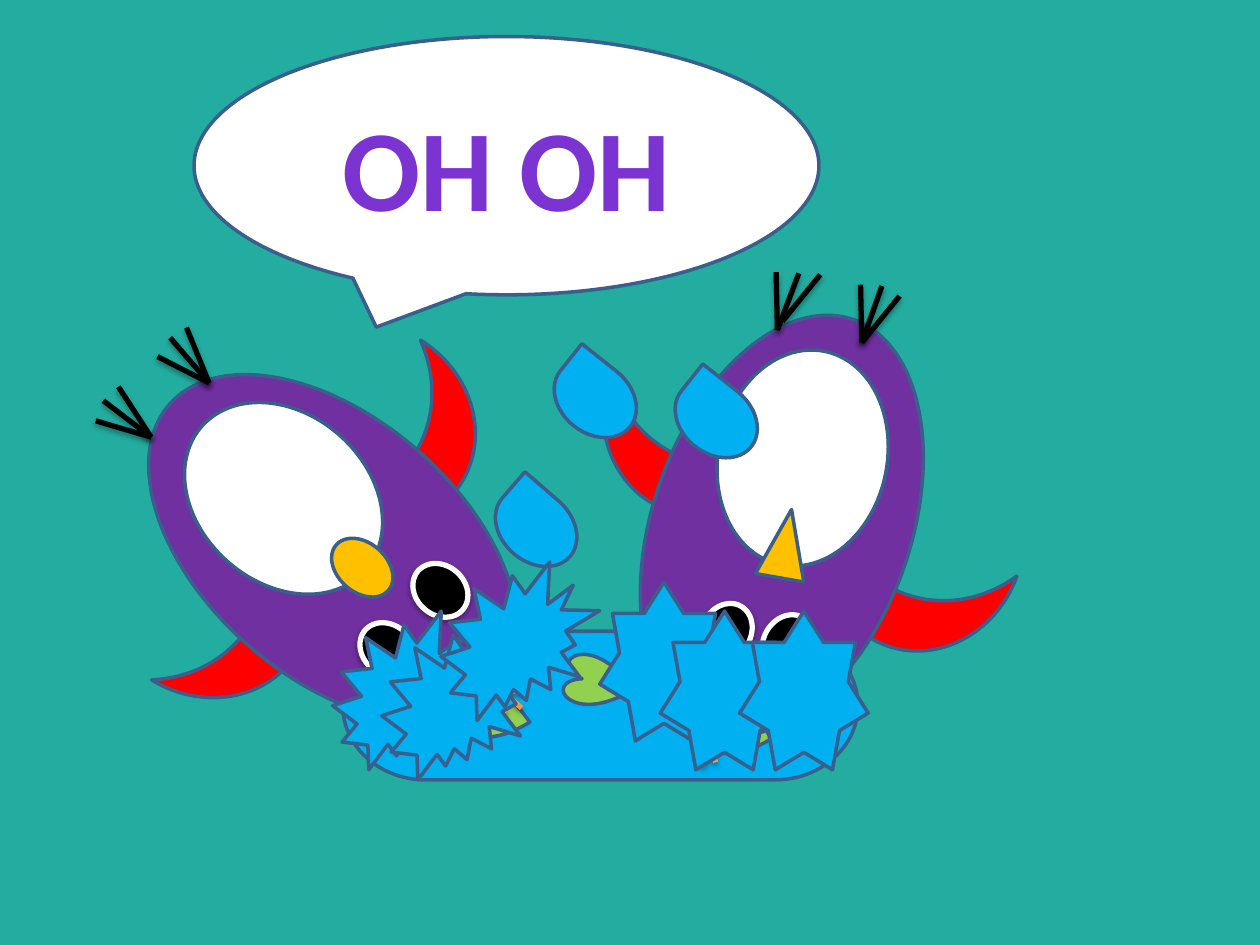
from dataclasses import dataclass
from pptx import Presentation, oxml, util as u
from pptx.dml.color import RGBColor
from pptx.enum import shapes, text
from pptx.oxml import ns

TEAL = RGBColor(0x23, 0xAD, 0xA0)
BLUE = RGBColor(0x00, 0xB0, 0xF0)
EDGE = RGBColor(0x3A, 0x5F, 0x8C)
GREEN = RGBColor(0x92, 0xD0, 0x50)
RED = RGBColor(0xFF, 0x00, 0x00)
PURPLE = RGBColor(0x70, 0x30, 0xA0)
GOLD = RGBColor(0xFF, 0xC0, 0x00)
ORANGE = RGBColor(0xF7, 0x96, 0x46)
BLACK = RGBColor(0x00, 0x00, 0x00)
WHITE = RGBColor(0xFF, 0xFF, 0xFF)
Kind = shapes.MSO_SHAPE
OVAL = Kind.FLOWCHART_CONNECTOR


@dataclass
class Form:
    kind: Kind
    size: tuple[float, float]
    fill: RGBColor
    edge: RGBColor = EDGE
    width: float = 2
    glow: bool = False


@dataclass
class Fan:
    root: tuple[float, float]
    tips: list[tuple[float, float]]
    color: RGBColor = BLACK


BOWL = Form(Kind.FLOWCHART_TERMINATOR, (4.09, 1.18), BLUE)
LEAF = Form(Kind.HEART, (0.39, 0.55), GREEN)
WING = Form(Kind.MOON, (0.87, 1.57), RED)
BODY = Form(OVAL, (2.05, 3.46), PURPLE)
EYE = Form(OVAL, (0.39, 0.47), BLACK, WHITE, 3, True)
BELLY = Form(OVAL, (1.34, 1.73), WHITE)
BEAK = Form(Kind.ISOSCELES_TRIANGLE, (0.39, 0.55), GOLD)
NOSE = Form(Kind.OVAL, (0.39, 0.55), GOLD)
DROP = Form(Kind.TEAR, (0.55, 0.71), BLUE)
STAR = Form(Kind.STAR_7_POINT, (1.02, 1.26), BLUE)
SPLASH = Form(Kind.EXPLOSION2, (1.26, 1.26), BLUE)
BUBBLE = Form(Kind.OVAL_CALLOUT, (4.96, 2.05), WHITE)


def shade(item, alpha: int, dist: float) -> None:
    item._element.spPr.append(oxml.parse_xml(
        f'<a:effectLst {ns.nsdecls("a")}><a:outerShdw blurRad="{u.Pt(3.1)}" '
        f'dist="{u.Pt(dist)}" dir="5400000" rotWithShape="0">'
        f'<a:srgbClr val="{BLACK}"><a:alpha val="{alpha}000"/></a:srgbClr>'
        '</a:outerShdw></a:effectLst>'))


def put(home, form: Form, spots: list[tuple[float, float]], turn: float = 0):
    for x, y in spots:
        item = home.add_shape(form.kind, *map(u.Inches, (x, y, *form.size)))
        item.rotation = turn
        item.fill.solid()
        item.fill.fore_color.rgb = form.fill
        item.line.color.rgb = form.edge
        item.line.width = u.Pt(form.width)
        if form.glow:
            shade(item, 38, 1.6)
        else:
            item.shadow.inherit = False
    return item


def spread(home, fan: Fan) -> None:
    for tip in fan.tips:
        line = home.add_connector(
            shapes.MSO_CONNECTOR.STRAIGHT, *map(u.Inches, (*fan.root, *tip)))
        line.line.color.rgb = fan.color
        line.line.width = u.Pt(3)
        shade(line, 35, 1.8)


def bowl(home) -> None:
    put(home, BOWL, [(2.72, 5.01)])
    put(home, LEAF, [(3.74, 5.4), (4.56, 5.14), (5.66, 5.53)], 281.8)


def right(home) -> None:
    put(home, WING, [(6.75, 3.93), (5, 2.85)], 289.8)
    put(home, BODY, [(5.18, 2.44)], 199.2)
    put(home, EYE, [(6.06, 4.87), (5.57, 4.78)], 209.5)
    for fan in (
        Fan((6.84, 2.72), [(6.83, 2.26), (7, 2.27), (7.14, 2.35)]),
        Fan((6.17, 2.62), [(6.16, 2.16), (6.34, 2.17)]),
        Fan((6.21, 2.55), [(6.51, 2.18)]),
        Fan((5.69, 5.87), [(5.55, 5.97), (5.57, 6.08)], ORANGE),
        Fan((5.68, 6.05), [(5.62, 5.83)], ORANGE),
    ):
        spread(home, fan)
    put(home, BELLY, [(5.7, 2.77)], 192)
    put(home, BEAK, [(6.04, 4.04)], 9.9)


def left(home) -> None:
    put(home, WING, [(2.86, 2.81), (1.55, 4.17)], 211.6)
    tilt = 131.3
    put(home, BODY, [(1.62, 2.62)], tilt)
    put(home, EYE, [(3.3, 4.45), (2.88, 4.92)], tilt)
    for fan in (
        Fan((3.94, 5.49), [(4.16, 5.48), (4.01, 5.66)], ORANGE),
        Fan((3.97, 5.47), [(4.14, 5.62)], ORANGE),
    ):
        spread(home, fan)
    put(home, BELLY, [(1.58, 3.09)], tilt)
    put(home, NOSE, [(2.68, 4.23)], tilt)
    for fan in (
        Fan((1.2, 3.47), [(0.94, 3.07), (0.76, 3.34), (0.82, 3.18)]),
        Fan((1.66, 3.04), [(1.48, 2.6), (1.25, 2.83), (1.35, 2.68)]),
    ):
        spread(home, fan)


def speak(home) -> None:
    frame = put(home, BUBBLE, [(1.54, 0.29)]).text_frame
    frame.word_wrap = True
    frame.vertical_anchor = text.MSO_ANCHOR.MIDDLE
    para = frame.paragraphs[0]
    para.alignment = text.PP_ALIGN.CENTER
    run = para.add_run()
    run.text = "OH OH"
    font = run.font
    font.name = "Calibri"
    font.size = u.Pt(66)
    font.bold = True
    stops = "".join(
        f'<a:gs pos="{spot}000"><a:srgbClr val="{tone}"/></a:gs>'
        for spot, tone in ((0, "3D1B67"), (43, "7B34D2"),
                           (48, "7330C4"), (100, "3D1B67")))
    props = run._r.get_or_add_rPr()
    props.insert(0, oxml.parse_xml(
        f'<a:ln {ns.nsdecls("a")} w="{u.Pt(0.71)}"><a:solidFill>'
        '<a:srgbClr val="5E457C"/></a:solidFill></a:ln>'))
    props.insert(1, oxml.parse_xml(
        f'<a:gradFill {ns.nsdecls("a")}><a:gsLst>{stops}</a:gsLst>'
        '<a:lin ang="5400000" scaled="0"/></a:gradFill>'))


def main() -> None:
    deck = Presentation()
    deck.slide_width = u.Inches(10)
    deck.slide_height = u.Inches(7.5)
    slide = deck.slides.add_slide(deck.slide_layouts[6])
    slide.background.fill.solid()
    slide.background.fill.fore_color.rgb = TEAL
    home = slide.shapes
    bowl(home.add_group_shape().shapes)
    right(home.add_group_shape().shapes)
    put(home, DROP, [(4.45, 2.81)], 308.5)
    put(home, DROP, [(3.98, 3.83)], 310.8)
    put(home, STAR, [(4.76, 4.62), (5.24, 4.85), (5.87, 4.85)])
    put(home, DROP, [(5.41, 2.97)], 308.5)
    left(home.add_group_shape().shapes)
    put(home, SPLASH, [(2.64, 4.85), (3.03, 4.93), (3.5, 4.46)])
    speak(home)
    deck.save("out.pptx")


if __name__ == "__main__":
    main()
